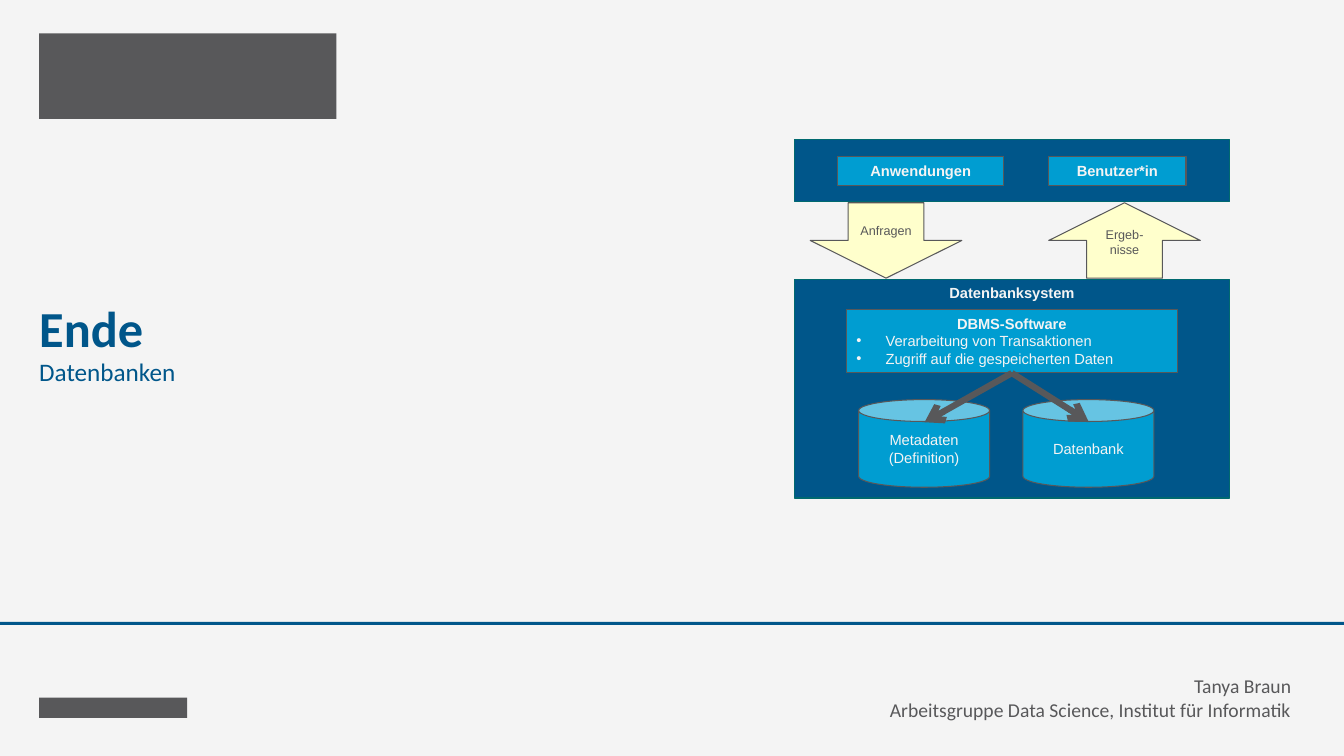
import pptx
import pptx.dml.color
import pptx.enum.shapes
import pptx.enum.text
import pptx.oxml.ns
import pptx.util
from lxml import etree

Cm = pptx.util.Cm
Pt = pptx.util.Pt
Kind = pptx.enum.shapes.MSO_SHAPE
Anchor = pptx.enum.text.MSO_ANCHOR
Align = pptx.enum.text.PP_ALIGN
qn = pptx.oxml.ns.qn

NAVY, CYAN, CREAM = "00568A", "009DD1", "FFFFCC"
GREY, TEAL, PALE = "58585A", "00696F", "F4F4F4"


def colour(value):
    return pptx.dml.color.RGBColor.from_string(value)


def assign(target, values):
    for name, value in values.items():
        setattr(target, name, value)


class Sheet:
    heading = {"name": "Calibri", "size": Pt(36), "bold": True}
    subheading = {"name": "Calibri", "size": Pt(18)}
    credit = {"name": "Calibri", "size": Pt(14)}
    label = {"name": "Arial", "size": Pt(10.5), "bold": False}
    strong = {**label, "bold": True}
    small = {"name": "Arial", "size": Pt(9)}

    def __init__(self, deck):
        self.slide = deck.slides.add_slide(deck.slide_layouts[6])
        self.shapes = self.slide.shapes
        background = self.slide.background.fill
        background.solid()
        background.fore_color.rgb = colour(PALE)

    def start_group(self):
        self.shapes = self.slide.shapes.add_group_shape().shapes

    def add_line(self, paragraph, line, font, ink, align):
        paragraph.alignment = align
        run = paragraph.add_run()
        run.text = line
        assign(run.font, font)
        run.font.color.rgb = colour(ink)

    def add_lines(self, frame, lines, font, ink, align):
        for number, line in enumerate(lines):
            paragraph = frame.add_paragraph() if number else frame.paragraphs[0]
            self.add_line(paragraph, line, font, ink, align)

    def text(self, box, lines, font, ink, anchor=Anchor.TOP, align=Align.LEFT):
        frame = self.shapes.add_textbox(*map(Cm, box)).text_frame
        margins = dict.fromkeys(
            ("margin_left", "margin_top", "margin_right", "margin_bottom"), 0)
        assign(frame, {"word_wrap": True, "vertical_anchor": anchor, **margins})
        self.add_lines(frame, lines, font, ink, align)
        return frame

    def shape(self, kind, box, fill, edge=None, width=0.75, lines=(),
              font=None, ink=PALE, anchor=Anchor.TOP):
        shape = self.shapes.add_shape(kind, *map(Cm, box))
        shape.shadow.inherit = False
        shape.fill.solid()
        shape.fill.fore_color.rgb = colour(fill)
        if edge:
            shape.line.color.rgb = colour(edge)
            shape.line.width = Pt(width)
        else:
            shape.line.fill.background()
        assign(shape.text_frame, {"word_wrap": True, "vertical_anchor": anchor})
        self.add_lines(shape.text_frame, lines, font, ink, Align.CENTER)
        return shape.text_frame

    def bullets(self, frame, lines):
        for line in lines:
            paragraph = frame.add_paragraph()
            self.add_line(paragraph, line, self.label, PALE, Align.LEFT)
            properties = paragraph._p.get_or_add_pPr()
            properties.set("marL", str(Cm(0.74)))
            properties.set("indent", str(-Cm(0.74)))
            etree.SubElement(properties, qn("a:buFont")).set("typeface", "Arial")
            etree.SubElement(properties, qn("a:buChar")).set("char", "•")

    def arrow(self, start, end):
        arrow = self.shapes.add_connector(
            pptx.enum.shapes.MSO_CONNECTOR.STRAIGHT, *map(Cm, start + end))
        arrow.line.color.rgb = colour(GREY)
        arrow.line.width = Pt(4.5)
        outline = arrow._element.spPr.find(qn("a:ln"))
        etree.SubElement(outline, qn("a:tailEnd")).set("type", "arrow")
        etree.SubElement(arrow._element.spPr, qn("a:effectLst"))


def main():
    deck = pptx.Presentation()
    assign(deck, {"slide_width": Cm(33.87), "slide_height": Cm(19.05)})
    sheet = Sheet(deck)

    sheet.shape(Kind.RECTANGLE, (0, 15.67, 33.87, 0.08), NAVY)
    sheet.shape(Kind.RECTANGLE, (0.99, 0.84, 7.49, 2.16), GREY)
    sheet.shape(Kind.RECTANGLE, (0.99, 17.58, 3.73, 0.51), GREY)

    title = sheet.text((0.99, 5.46, 23.72, 3.56), ["Ende"], sheet.heading, NAVY,
                       anchor=Anchor.BOTTOM)
    title.paragraphs[0].line_spacing = 0.9
    sheet.text((0.99, 8.99, 23.72, 2.49), ["Datenbanken"], sheet.subheading, NAVY)
    sheet.text((13.34, 16.87, 19.2, 1.3),
               ["Tanya Braun", "Arbeitsgruppe Data Science, Institut für Informatik"],
               sheet.credit, GREY, anchor=Anchor.BOTTOM, align=Align.RIGHT)

    sheet.start_group()
    sheet.shape(Kind.RECTANGLE, (20.02, 7.04, 10.97, 5.51), NAVY, TEAL, 1,
                ["Datenbanksystem"], sheet.strong)
    sheet.shape(Kind.RECTANGLE, (20.02, 3.51, 10.97, 1.57), NAVY, TEAL, 1)

    for left, store in ((21.64, "Metadaten (Definition)"), (25.78, "Datenbank")):
        sheet.shape(Kind.CAN, (left, 10.07, 3.3, 2.21), CYAN, GREY,
                    lines=[store], font=sheet.label, anchor=Anchor.MIDDLE)

    software = sheet.shape(Kind.RECTANGLE, (21.33, 7.8, 8.34, 1.6), CYAN, GREY,
                           lines=["DBMS-Software"], font=sheet.strong)
    sheet.bullets(software, ["Verarbeitung von Transaktionen",
                             "Zugriff auf die gespeicherten Daten"])

    for left, width, client in ((21.11, 4.19, "Anwendungen"), (26.43, 3.46, "Benutzer*in")):
        sheet.shape(Kind.RECTANGLE, (left, 3.94, width, 0.74), CYAN, GREY,
                    lines=[client], font=sheet.strong, anchor=Anchor.MIDDLE)

    requests = sheet.shape(Kind.DOWN_ARROW, (20.42, 5.11, 3.82, 1.9), CREAM, GREY,
                           lines=["Anfragen"], font=sheet.small, ink=GREY)
    requests.margin_top = Cm(0.5)
    sheet.shape(Kind.UP_ARROW, (26.43, 5.11, 3.82, 1.9), CREAM, GREY,
                lines=["Ergeb-nisse"], font=sheet.small, ink=GREY)

    for store_top in ((23.3, 10.64), (27.43, 10.62)):
        sheet.arrow((25.5, 9.4), store_top)

    deck.save("out.pptx")


if __name__ == "__main__":
    main()
